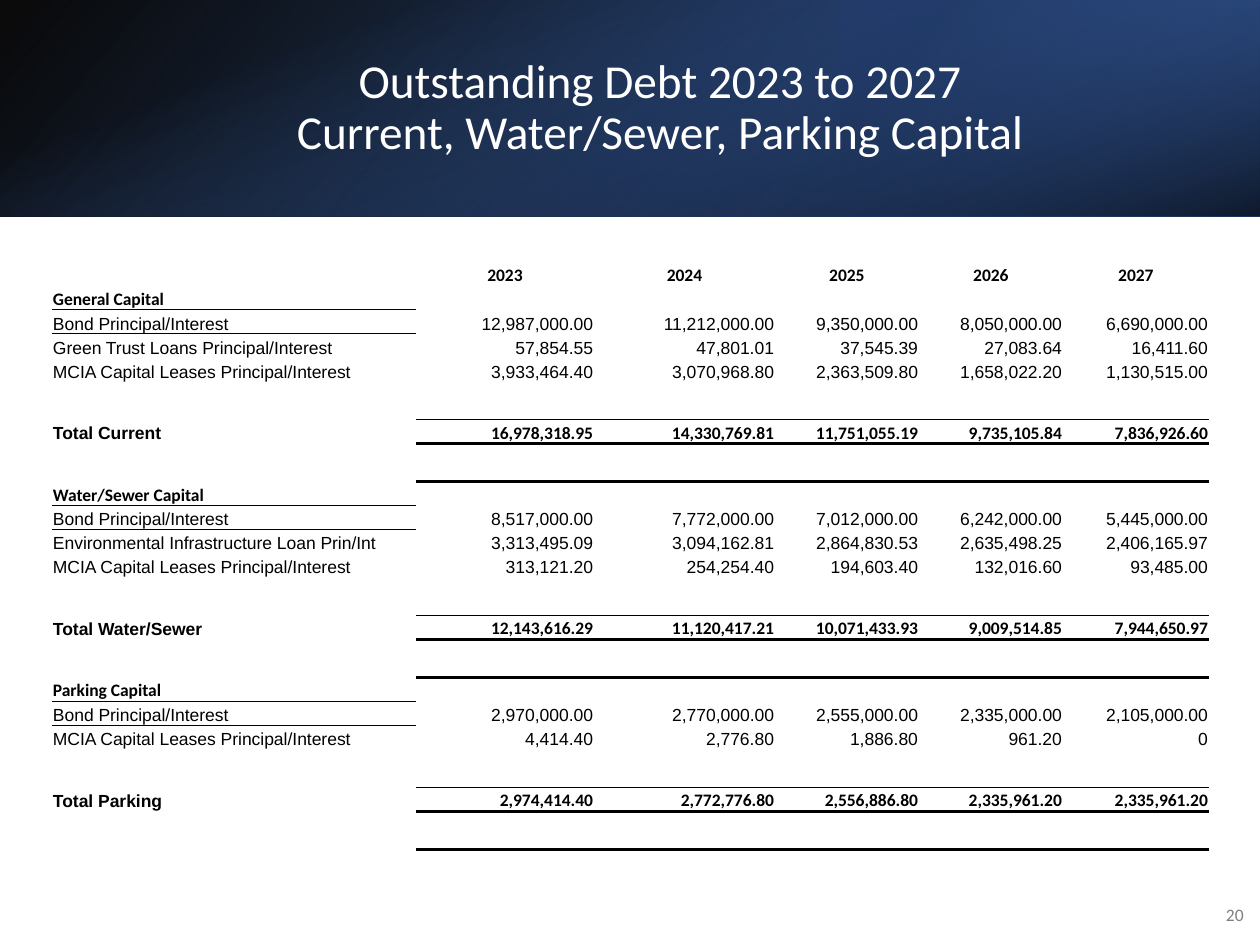
from lxml.etree import SubElement
from pptx import Presentation
from pptx.dml.color import RGBColor
from pptx.enum.shapes import MSO_SHAPE
from pptx.enum.text import MSO_ANCHOR as ANCHOR, PP_ALIGN as ALIGN
from pptx.oxml import parse_xml
from pptx.oxml.ns import nsdecls, qn
from pptx.util import Pt

PX = 914400 / 126
COLORS = {"black": "000000", "white": "FFFFFF", "gray": "808080",
          "blue": "4472C4", "mid": "2F5597", "navy": "203864"}
THIN, THICK = 0.5, 2
NO_STYLE = "{2D5ABB26-0587-4C30-8999-92F81FD0307C}"
COLS = [364, 178, 181, 144, 144, 146]
HEIGHTS = {"blank": 20, "header": 24, "section": 24, "item": 24,
           "total": 24, "before": 38, "after": 38, "last": 38}
FORMATS = {
    "header": ("Calibri", "Calibri", True, ALIGN.CENTER),
    "section": ("Calibri", "Calibri", True, ALIGN.RIGHT),
    "item": ("Arial", "Arial", False, ALIGN.RIGHT),
    "total": ("Arial", "Calibri", True, ALIGN.RIGHT),
}
LABEL_BORDERS = {"section": {"B": THIN}}
VALUE_BORDERS = {"before": {"B": THIN}, "total": {"T": THIN, "B": THICK},
                 "after": {"T": THICK}}
YEARS = ["", "2023", "2024", "2025", "2026", "2027"]
BOND, LEASES = "Bond Principal/Interest", "MCIA Capital Leases Principal/Interest"
SECTIONS = [
    ("General Capital", [
        [BOND, "12,987,000.00", "11,212,000.00", "9,350,000.00", "8,050,000.00", "6,690,000.00"],
        ["Green Trust Loans Principal/Interest",
         "57,854.55", "47,801.01", "37,545.39", "27,083.64", "16,411.60"],
        [LEASES, "3,933,464.40", "3,070,968.80", "2,363,509.80", "1,658,022.20", "1,130,515.00"],
    ], ["Total Current", "16,978,318.95", "14,330,769.81", "11,751,055.19",
        "9,735,105.84", "7,836,926.60"]),
    ("Water/Sewer Capital", [
        [BOND, "8,517,000.00", "7,772,000.00", "7,012,000.00", "6,242,000.00", "5,445,000.00"],
        ["Environmental Infrastructure Loan Prin/Int",
         "3,313,495.09", "3,094,162.81", "2,864,830.53", "2,635,498.25", "2,406,165.97"],
        [LEASES, "313,121.20", "254,254.40", "194,603.40", "132,016.60", "93,485.00"],
    ], ["Total Water/Sewer", "12,143,616.29", "11,120,417.21", "10,071,433.93",
        "9,009,514.85", "7,944,650.97"]),
    ("Parking Capital", [
        [BOND, "2,970,000.00", "2,770,000.00", "2,555,000.00", "2,335,000.00", "2,105,000.00"],
        [LEASES, "4,414.40", "2,776.80", "1,886.80", "961.20", "0"],
    ], ["Total Parking", "2,974,414.40", "2,772,776.80", "2,556,886.80",
        "2,335,961.20", "2,335,961.20"]),
]


def px(n):
    """Convert pixels to EMU."""
    return round(n * PX)


def set_attrs(obj, values):
    """Set each attribute of an object from a dict."""
    for name, value in values.items():
        setattr(obj, name, value)


def add_run(p, text, color, **font):
    """Add a run with its font format."""
    r = p.add_run()
    r.text = text
    set_attrs(r.font, font)
    r.font.color.rgb = RGBColor.from_string(COLORS[color])


def add_gradient(slide, box, stops, angle, rotation=0, flip=False):
    """Add a borderless rectangle with a translucent linear gradient."""
    sp = slide.shapes.add_shape(MSO_SHAPE.RECTANGLE, *map(px, box))
    sp.shadow.inherit = False
    sp.line.fill.background()
    sp.rotation = rotation
    if flip:
        sp._element.spPr.xfrm.set("flipH", "1")
    marks = "".join(
        f'<a:gs pos="{pos * 1000}"><a:srgbClr val="{COLORS[color]}">'
        f'<a:alpha val="{alpha * 1000}"/></a:srgbClr></a:gs>'
        for pos, color, alpha in stops)
    sp._element.spPr.find(qn("a:prstGeom")).addnext(parse_xml(
        f'<a:gradFill {nsdecls("a")} rotWithShape="1"><a:gsLst>{marks}</a:gsLst>'
        f'<a:lin ang="{angle * 60000}" scaled="0"/></a:gradFill>'))


def add_text(slide, box, lines, size, color, **paragraph):
    """Add a text box whose lines share one paragraph."""
    tf = slide.shapes.add_textbox(*map(px, box)).text_frame
    set_attrs(tf, {"word_wrap": True, "vertical_anchor": ANCHOR.MIDDLE})
    p = tf.paragraphs[0]
    set_attrs(p, paragraph)
    for i, line in enumerate(lines):
        if i:
            p.add_line_break()
        add_run(p, line, color, name="Calibri", size=Pt(size))


def add_border(cell, side, width):
    """Draw one black edge of a table cell."""
    ln = SubElement(cell._tc.get_or_add_tcPr(), qn(f"a:ln{side}"), w=str(Pt(width)))
    fill = SubElement(ln, qn("a:solidFill"))
    SubElement(fill, qn("a:srgbClr"), val=COLORS["black"])


def fill_cell(cell, kind, col, text):
    """Write and format one table cell."""
    set_attrs(cell, {"margin_left": px(1), "margin_right": px(1), "margin_top": px(1),
                     "margin_bottom": 0, "vertical_anchor": ANCHOR.BOTTOM})
    borders = VALUE_BORDERS if col else LABEL_BORDERS
    for side, width in borders.get(kind, {}).items():
        add_border(cell, side, width)
    if kind == "item" and col == 0 and text == BOND:
        add_border(cell, "T", THIN)
    cell.fill.background()
    p = cell.text_frame.paragraphs[0]
    if not text:
        SubElement(p._p, qn("a:endParaRPr"), sz="800")
        return
    label_font, value_font, bold, align = FORMATS[kind]
    p.alignment = align if col else ALIGN.LEFT
    add_run(p, text, "black", name=value_font if col else label_font, size=Pt(10), bold=bold)


def debt_rows():
    """List every table row as its kind and its texts."""
    rows = [("blank", []), ("header", YEARS)]
    for name, items, total in SECTIONS:
        rows.append(("section", [name]))
        rows += [("item", item) for item in items]
        rows += [("before", []), ("total", total), ("after", [])]
    return rows + [("last", [])]


def add_debt_table(slide):
    """Add the table of outstanding debt."""
    rows = debt_rows()
    height = sum(HEIGHTS[kind] for kind, _ in rows)
    tbl = slide.shapes.add_table(len(rows), len(COLS), px(52), px(242),
                                 px(sum(COLS)), px(height)).table
    set_attrs(tbl, {"first_row": False, "horz_banding": False})
    tbl._tbl.tblPr.find(qn("a:tableStyleId")).text = NO_STYLE
    for column, width in zip(tbl.columns, COLS):
        column.width = px(width)
    for i, (kind, texts) in enumerate(rows):
        tbl.rows[i].height = px(HEIGHTS[kind])
        for j in range(len(COLS)):
            fill_cell(tbl.cell(i, j), kind, j, texts[j] if j < len(texts) else "")


def main():
    """Build the slide and save it."""
    prs = Presentation()
    set_attrs(prs, {"slide_width": px(1260), "slide_height": px(945)})
    slide = prs.slides.add_slide(prs.slide_layouts[6])
    add_gradient(slide, (0, 0, 1260, 217), [(0, "black", 96), (100, "mid", 100)], 140, flip=True)
    add_gradient(slide, (840, 0, 420, 217), [(19, "navy", 68), (100, "blue", 79)], 320, 180, True)
    add_gradient(slide, (522, -522, 217, 1260), [(23, "blue", 0), (99, "black", 74)], 340, 90)
    add_text(slide, (141, 48, 1038, 121),
             ["Outstanding Debt 2023 to 2027", "Current, Water/Sewer, Parking Capital"],
             27, "white", alignment=ALIGN.CENTER, line_spacing=0.9)
    add_text(slide, (1210, 890, 46, 50), ["20"], 10, "gray",
             alignment=ALIGN.RIGHT, space_after=Pt(6))
    add_debt_table(slide)
    prs.save("out.pptx")


if __name__ == "__main__":
    main()
